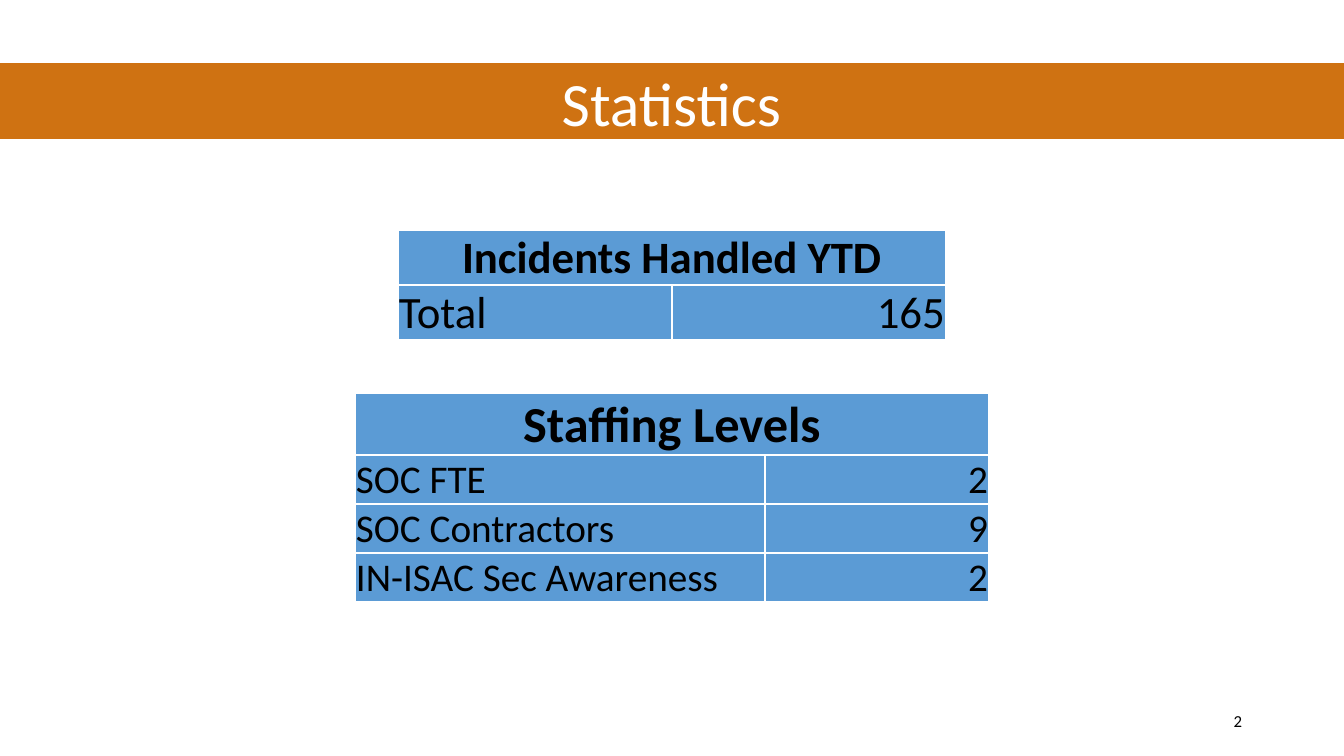
from dataclasses import dataclass

from lxml import etree
from pptx import Presentation
from pptx import util as u
from pptx.dml.color import RGBColor
from pptx.enum import shapes, text
from pptx.oxml import ns

PX = u.Inches(1) / 100.8
FONT = "Calibri"
COLORS = {"band": "CF7212", "cell": "5B9BD5", "ink": "000000", "white": "FFFFFF"}
ALIGN = text.PP_ALIGN
ANCHOR = text.MSO_ANCHOR


@dataclass
class StatTable:
    left: int
    top: int
    columns: list[int]
    heading: str
    heading_size: int
    heading_height: int
    rows: list[tuple[str, str]]
    row_size: int
    row_height: int


TABLES = [
    StatTable(355, 393, [410, 224], "Staffing Levels", 36, 62,
              [("SOC FTE", "2"), ("SOC Contractors", "9"), ("IN-ISAC Sec Awareness", "2")],
              28, 49),
    StatTable(398, 230, [274, 274], "Incidents Handled YTD", 32, 55,
              [("Total", "165")], 32, 55),
]


def px(length: int) -> u.Emu:
    return u.Emu(round(length * PX))


def rgb(name: str) -> RGBColor:
    return RGBColor.from_string(COLORS[name])


def write(frame, words: str, size: int, color: str = "ink", bold: bool = False,
          align=ALIGN.LEFT, spacing: float = 1.0) -> None:
    para = frame.paragraphs[0]
    para.alignment = align
    para.line_spacing = spacing
    span = para.add_run()
    span.text = words
    span.font.name = FONT
    span.font.size = u.Pt(size)
    span.font.bold = bold
    span.font.color.rgb = rgb(color)


def style_cell(cell) -> None:
    """Set margins, white borders and fill; borders must precede the fill."""
    cell.margin_left = cell.margin_right = cell.margin_top = px(1)
    cell.margin_bottom = 0
    cell.vertical_anchor = ANCHOR.BOTTOM
    properties = cell._tc.get_or_add_tcPr()
    for side in ("lnL", "lnR", "lnT", "lnB"):
        line = etree.SubElement(properties, ns.qn(f"a:{side}"), w=str(u.Pt(1)))
        fill = etree.SubElement(line, ns.qn("a:solidFill"))
        etree.SubElement(fill, ns.qn("a:srgbClr"), val=COLORS["white"])
    cell.fill.solid()
    cell.fill.fore_color.rgb = rgb("cell")


def add_stat_table(page, stat: StatTable) -> None:
    heights = [stat.heading_height] + [stat.row_height] * len(stat.rows)
    table = page.shapes.add_table(
        len(heights), len(stat.columns), px(stat.left), px(stat.top),
        px(sum(stat.columns)), px(sum(heights))).table
    table.first_row = table.horz_banding = False
    for column, width in zip(table.columns, stat.columns):
        column.width = px(width)
    for row, height in zip(table.rows, heights):
        row.height = px(height)
        for cell in row.cells:
            style_cell(cell)

    heading = table.cell(0, 0)
    heading.merge(table.cell(0, 1))
    write(heading.text_frame, stat.heading, stat.heading_size, bold=True, align=ALIGN.CENTER)
    for index, (label, value) in enumerate(stat.rows, start=1):
        write(table.cell(index, 0).text_frame, label, stat.row_size)
        write(table.cell(index, 1).text_frame, value, stat.row_size, align=ALIGN.RIGHT)


def main() -> None:
    deck = Presentation()
    deck.slide_width, deck.slide_height = px(1344), px(756)
    page = deck.slides.add_slide(deck.slide_layouts.get_by_name("Title Only"))

    # Band, sent behind the title
    band = page.shapes.add_shape(shapes.MSO_SHAPE.RECTANGLE, 0, px(63), px(1344), px(76))
    band.shadow.inherit = False
    band.fill.solid()
    band.fill.fore_color.rgb = rgb("band")
    band.line.fill.background()
    page.shapes._spTree.insert(2, band._element)

    # Title
    title = page.shapes.title
    title.left, title.top, title.width, title.height = px(304), px(67), px(735), px(80)
    title.text_frame.auto_size = text.MSO_AUTO_SIZE.NONE
    title.text_frame.vertical_anchor = ANCHOR.MIDDLE
    write(title.text_frame, "Statistics", 44, color="white", align=ALIGN.CENTER, spacing=0.9)

    # Page number
    box = page.shapes.add_textbox(px(950), px(701), px(302), px(40))
    box.text_frame.word_wrap = True
    box.text_frame.vertical_anchor = ANCHOR.MIDDLE
    write(box.text_frame, "2", 12, align=ALIGN.RIGHT)

    # Tables
    for stat in TABLES:
        add_stat_table(page, stat)

    deck.save("out.pptx")


if __name__ == "__main__":
    main()
